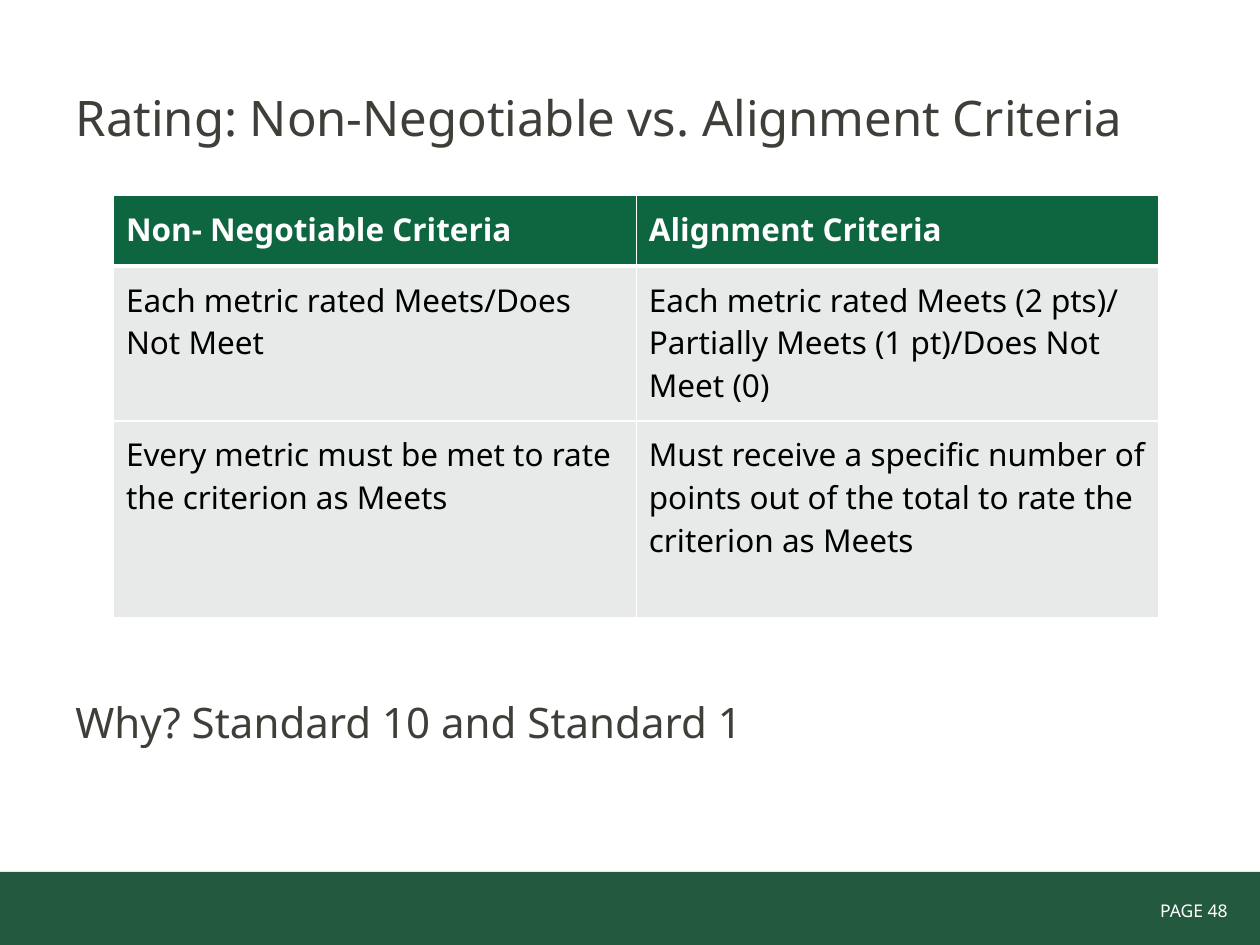
from dataclasses import dataclass

from lxml import etree
from pptx import Presentation
from pptx.dml.color import RGBColor
from pptx.enum.shapes import MSO_SHAPE
from pptx.enum.text import MSO_ANCHOR, PP_ALIGN
from pptx.oxml.ns import qn
from pptx.util import Inches, Pt

RECTANGLE = MSO_SHAPE.RECTANGLE
TOP, MIDDLE = MSO_ANCHOR.TOP, MSO_ANCHOR.MIDDLE
LEFT, RIGHT = PP_ALIGN.LEFT, PP_ALIGN.RIGHT
TITLE_ONLY = 5


@dataclass(frozen=True)
class Theme:
    font: str = "Noto Sans"
    ink: str = "3F3F39"
    black: str = "000000"
    white: str = "FFFFFF"
    footer: str = "23593E"
    header: str = "0E6641"
    body: str = "E7EAE9"
    title_size: int = 28
    note_size: int = 24
    table_size: int = 18
    page_size: int = 10


THEME = Theme()
CRITERIA = [
    ["Non- Negotiable Criteria", "Alignment Criteria"],
    ["Each metric rated Meets/Does Not Meet",
     "Each metric rated Meets (2 pts)/ Partially Meets (1 pt)/Does Not Meet (0)"],
    ["Every metric must be met to rate the criterion as Meets",
     "Must receive a specific number of points out of the total to rate "
     "the criterion as Meets"],
]
ROW_HEIGHTS = [0.56, 1.23, 1.56]
COLUMN_WIDTH = 4.15


def write_text(frame, text, *, size, color=THEME.ink, bold=False, align=LEFT):
    frame.word_wrap = True
    para = frame.paragraphs[0]
    para.alignment = align
    span = para.add_run()
    span.text = text
    span.font.name = THEME.font
    span.font.size = Pt(size)
    span.font.bold = bold
    span.font.color.rgb = RGBColor.from_string(color)


def place(shape, left, top, width, height):
    shape.left, shape.top = Inches(left), Inches(top)
    shape.width, shape.height = Inches(width), Inches(height)


def add_title(page, text):
    title = page.shapes.title
    place(title, 0.5, 0.3, 9, 1.25)
    title.text_frame.vertical_anchor = MIDDLE
    write_text(title.text_frame, text, size=THEME.title_size)


def add_text(page, bounds, text, **text_format):
    box = page.shapes.add_textbox(*map(Inches, bounds))
    write_text(box.text_frame, text, **text_format)


def add_footer(page, text):
    bar = page.shapes.add_shape(
        RECTANGLE, Inches(0), Inches(6.92), Inches(10), Inches(0.58))
    bar.shadow.inherit = False
    bar.fill.solid()
    bar.fill.fore_color.rgb = RGBColor.from_string(THEME.footer)
    bar.line.fill.background()
    add_text(page, (8.25, 7.09, 1.59, 0.27), text,
             size=THEME.page_size, color=THEME.white, align=RIGHT)


def set_borders(cell, bottom_width=1, top_width=1):
    """Draw white borders; they must precede the cell's fill in the XML."""
    properties = cell._tc.get_or_add_tcPr()
    widths = {"a:lnL": 1, "a:lnR": 1, "a:lnT": top_width, "a:lnB": bottom_width}
    for index, (side, width) in enumerate(widths.items()):
        line = etree.Element(qn(side), w=str(Pt(width)))
        fill = etree.SubElement(line, qn("a:solidFill"))
        etree.SubElement(fill, qn("a:srgbClr"), val=THEME.white)
        properties.insert(index, line)


def format_cell(cell, text, row):
    is_header = row == 0
    cell.margin_left = cell.margin_right = Inches(0.1)
    cell.margin_top = cell.margin_bottom = Inches(0.1)
    cell.vertical_anchor = TOP
    cell.fill.solid()
    cell.fill.fore_color.rgb = RGBColor.from_string(
        THEME.header if is_header else THEME.body)
    set_borders(cell, bottom_width=3 if is_header else 1,
                top_width=3 if row == 1 else 1)
    write_text(cell.text_frame, text, size=THEME.table_size, bold=is_header,
               color=THEME.white if is_header else THEME.black)


def add_criteria_table(page):
    columns = len(CRITERIA[0])
    table = page.shapes.add_table(
        len(CRITERIA), columns, Inches(0.9), Inches(1.55),
        Inches(COLUMN_WIDTH * columns), Inches(sum(ROW_HEIGHTS))).table
    for column in table.columns:
        column.width = Inches(COLUMN_WIDTH)
    for row, (texts, height) in enumerate(zip(CRITERIA, ROW_HEIGHTS)):
        table.rows[row].height = Inches(height)
        for column, text in enumerate(texts):
            format_cell(table.cell(row, column), text, row)


def main():
    deck = Presentation()
    deck.slide_width, deck.slide_height = Inches(10), Inches(7.5)
    page = deck.slides.add_slide(deck.slide_layouts[TITLE_ONLY])
    add_footer(page, "PAGE 48")
    add_title(page, "Rating: Non-Negotiable vs. Alignment Criteria")
    add_text(page, (0.5, 5.48, 9, 0.6), "Why? Standard 10 and Standard 1",
             size=THEME.note_size)
    add_criteria_table(page)
    deck.save("out.pptx")


if __name__ == "__main__":
    main()
